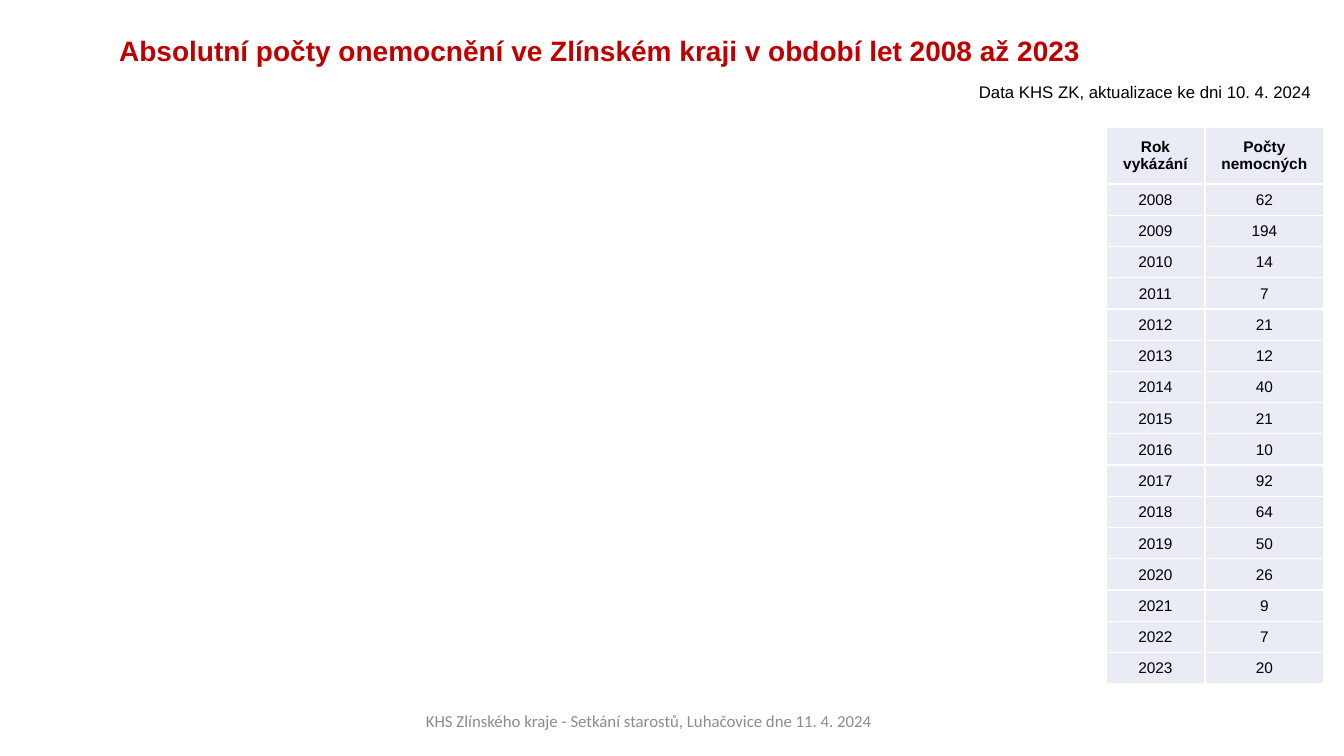
from lxml import etree
from pptx import Presentation
from pptx.dml.color import RGBColor
from pptx.enum.text import MSO_ANCHOR as Anchor, MSO_AUTO_SIZE as AutoSize, PP_ALIGN as Align
from pptx.oxml.ns import qn
from pptx.util import Pt

TITLE = "Absolutní počty onemocnění ve Zlínském kraji v období let 2008 až 2023"
UPDATED = "Data KHS ZK, aktualizace ke dni 10. 4. 2024"
FOOTER = "KHS Zlínského kraje - Setkání starostů, Luhačovice dne 11. 4. 2024"
HEADINGS = ("Rok vykázání", "Počty nemocných")
FIRST_YEAR = 2008
CASES = [62, 194, 14, 7, 21, 12, 40, 21, 10, 92, 64, 50, 26, 9, 7, 20]

RED = RGBColor(0xC0, 0x00, 0x00)
BLACK = RGBColor(0x00, 0x00, 0x00)
GRAY = RGBColor(0x8C, 0x8C, 0x8C)
WHITE = RGBColor(0xFF, 0xFF, 0xFF)
CELL_FILL = RGBColor(0xE9, 0xEB, 0xF5)

SLIDE_SIZE = (1344, 756)
TITLE_BOX = (109, 28, 997, 44)
UPDATED_BOX = (969, 77, 355, 30)
FOOTER_BOX = (399, 701, 500, 40)
TABLE_BOX = (1106, 127, 218, 557)
COLUMN_WIDTHS = (99, 119)
HEADING_HEIGHT = 57


def px(length):
    """Convert pixels to EMU."""
    return round(length * 914400 / 100.8)


def write(frame, text, size=12, font="Arial", color=BLACK, bold=False,
          align=Align.LEFT, anchor=Anchor.TOP, wrap=False):
    """Put one formatted paragraph into a text frame."""
    frame.word_wrap = wrap
    frame.vertical_anchor = anchor
    paragraph = frame.paragraphs[0]
    paragraph.alignment = align
    run = paragraph.add_run()
    run.text = text
    run.font.size = Pt(size)
    run.font.name = font
    run.font.bold = bold
    run.font.color.rgb = color


def add_borders(cell):
    """Draw a thin white line on all four sides of a cell."""
    properties = cell._tc.get_or_add_tcPr()
    for side in ("lnL", "lnR", "lnT", "lnB"):
        line = etree.SubElement(properties, qn(f"a:{side}"), w=str(Pt(1)))
        fill = etree.SubElement(line, qn("a:solidFill"))
        etree.SubElement(fill, qn("a:srgbClr"), val=str(WHITE))


def add_case_table(slide):
    """Add the table of yearly case counts."""
    rows = [HEADINGS] + [(FIRST_YEAR + i, count) for i, count in enumerate(CASES)]
    table = slide.shapes.add_table(len(rows), len(HEADINGS), *map(px, TABLE_BOX)).table
    table.first_row = table.horz_banding = False
    for column, width in zip(table.columns, COLUMN_WIDTHS):
        column.width = px(width)
    row_height = (TABLE_BOX[3] - HEADING_HEIGHT) / len(CASES)
    for r, values in enumerate(rows):
        table.rows[r].height = px(row_height if r else HEADING_HEIGHT)
        for c, value in enumerate(values):
            cell = table.cell(r, c)
            cell.margin_left = cell.margin_right = cell.margin_top = px(1)
            cell.margin_bottom = 0
            write(cell.text_frame, str(value), size=11, bold=r == 0,
                  align=Align.CENTER, wrap=True)
            cell.vertical_anchor = Anchor.MIDDLE
            add_borders(cell)
            cell.fill.solid()
            cell.fill.fore_color.rgb = CELL_FILL


def main():
    """Build and save the slide."""
    presentation = Presentation()
    presentation.slide_width, presentation.slide_height = map(px, SLIDE_SIZE)
    slide = presentation.slides.add_slide(presentation.slide_layouts[5])
    add_case_table(slide)

    title = slide.shapes.title
    title.left, title.top, title.width, title.height = map(px, TITLE_BOX)
    title.text_frame.auto_size = AutoSize.NONE
    write(title.text_frame, TITLE, size=20, color=RED, bold=True, wrap=True)

    updated = slide.shapes.add_textbox(*map(px, UPDATED_BOX))
    write(updated.text_frame, UPDATED)

    footer = slide.shapes.add_textbox(*map(px, FOOTER_BOX))
    write(footer.text_frame, FOOTER, font="Calibri", color=GRAY,
          align=Align.CENTER, anchor=Anchor.MIDDLE, wrap=True)
    presentation.save("out.pptx")


if __name__ == "__main__":
    main()
